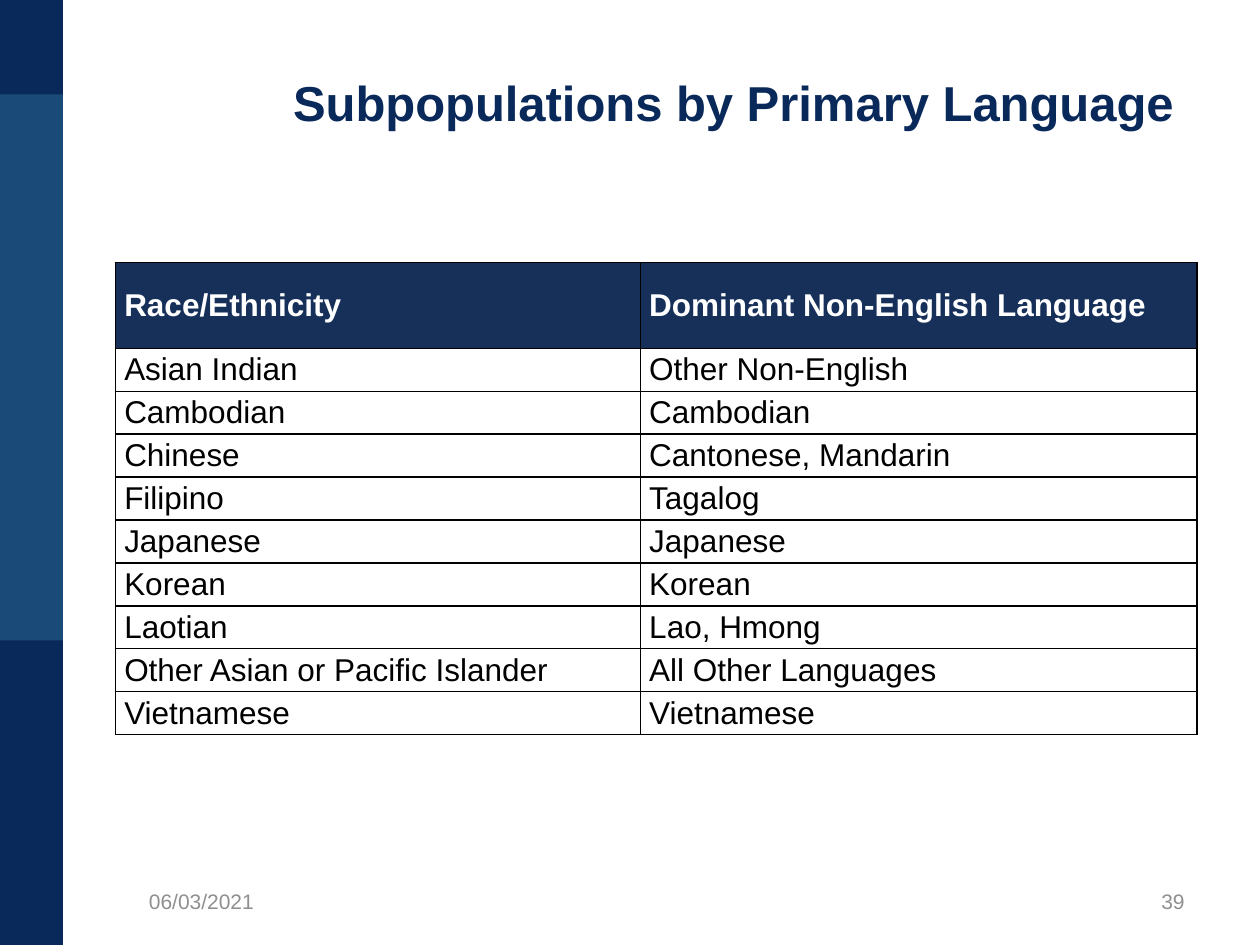
"""Build the slide that matches Asian subpopulations with their dominant languages."""
from lxml.etree import SubElement
from pptx import Presentation
from pptx.dml.color import RGBColor
from pptx.enum.shapes import MSO_SHAPE
from pptx.enum.text import MSO_ANCHOR, PP_ALIGN
from pptx.oxml.ns import qn
from pptx.util import Inches, Pt

COLORS = {
    "navy": "0A295B",
    "blue": "1A4A78",
    "header": "17305A",
    "white": "FFFFFF",
    "black": "000000",
    "gray": "8F8F8F",
}
LANGUAGES = [
    ("Race/Ethnicity", "Dominant Non-English Language"),
    ("Asian Indian", "Other Non-English"),
    ("Cambodian", "Cambodian"),
    ("Chinese", "Cantonese, Mandarin"),
    ("Filipino", "Tagalog"),
    ("Japanese", "Japanese"),
    ("Korean", "Korean"),
    ("Laotian", "Lao, Hmong"),
    ("Other Asian or Pacific Islander", "All Other Languages"),
    ("Vietnamese", "Vietnamese"),
]


def rgb(name):
    return RGBColor.from_string(COLORS[name])


def write(frame, text, size=18, color="black", bold=False, align=PP_ALIGN.LEFT):
    paragraph = frame.paragraphs[0]
    paragraph.alignment = align
    run = paragraph.add_run()
    run.text = text
    run.font.name = "Arial"
    run.font.size = Pt(size)
    run.font.bold = bold
    run.font.color.rgb = rgb(color)


class Page:
    def __init__(self, slide, unit=1 / 12):
        self.slide = slide
        self.unit = unit

    def span(self, *steps):
        return [Inches(step * self.unit) for step in steps]

    def band(self, top, height, color):
        band = self.slide.shapes.add_shape(
            MSO_SHAPE.RECTANGLE, *self.span(0, top, 6, height))
        band.shadow.inherit = False
        band.fill.solid()
        band.fill.fore_color.rgb = rgb(color)
        band.line.fill.background()

    def label(self, place, text, **style):
        frame = self.slide.shapes.add_textbox(*self.span(*place)).text_frame
        frame.word_wrap = True
        frame.vertical_anchor = MSO_ANCHOR.MIDDLE
        write(frame, text, **style)

    def border(self, cell):
        properties = cell._tc.get_or_add_tcPr()
        for position, side in enumerate(("a:lnL", "a:lnR", "a:lnT", "a:lnB")):
            line = SubElement(properties, qn(side), w=str(Pt(1)))
            fill = SubElement(line, qn("a:solidFill"))
            SubElement(fill, qn("a:srgbClr"), val=COLORS["black"])
            properties.insert(position, line)

    def cell(self, cell, text, heading):
        cell.margin_left = cell.margin_right = Inches(0.07)
        cell.margin_top = cell.margin_bottom = 0
        cell.vertical_anchor = MSO_ANCHOR.MIDDLE
        if heading:
            cell.fill.solid()
            cell.fill.fore_color.rgb = rgb("header")
        else:
            cell.fill.background()
        self.border(cell)
        write(cell.text_frame, text, color="white" if heading else "black", bold=heading)

    def table(self, left, top, widths, height, rows):
        table = self.slide.shapes.add_table(
            len(rows), len(widths), *self.span(left, top, sum(widths), height)).table
        table.first_row = table.horz_banding = False
        for column, width in zip(table.columns, self.span(*widths)):
            column.width = width
        row_height = height / (len(rows) + 1)
        for index, texts in enumerate(rows):
            heading = index == 0
            table.rows[index].height, = self.span(row_height * (2 if heading else 1))
            for column, text in enumerate(texts):
                self.cell(table.cell(index, column), text, heading)


def main():
    deck = Presentation()
    deck.slide_width, deck.slide_height = Inches(10), Inches(7.5)
    page = Page(deck.slides.add_slide(deck.slide_layouts[6]))
    page.band(0, 90, "blue")
    page.band(0, 9, "navy")
    page.band(61, 29, "navy")
    page.label((24, 7, 93, 5.4), "Subpopulations by Primary Language ",
               size=28, color="navy", bold=True, align=PP_ALIGN.CENTER)
    page.table(11, 25, (50, 53), 45, LANGUAGES)
    for left, text, align in ((13, "06/03/2021", PP_ALIGN.LEFT), (86, "39", PP_ALIGN.RIGHT)):
        page.label((left, 83.4, 28, 4.8), text, size=12, color="gray", align=align)
    deck.save("out.pptx")


if __name__ == "__main__":
    main()
